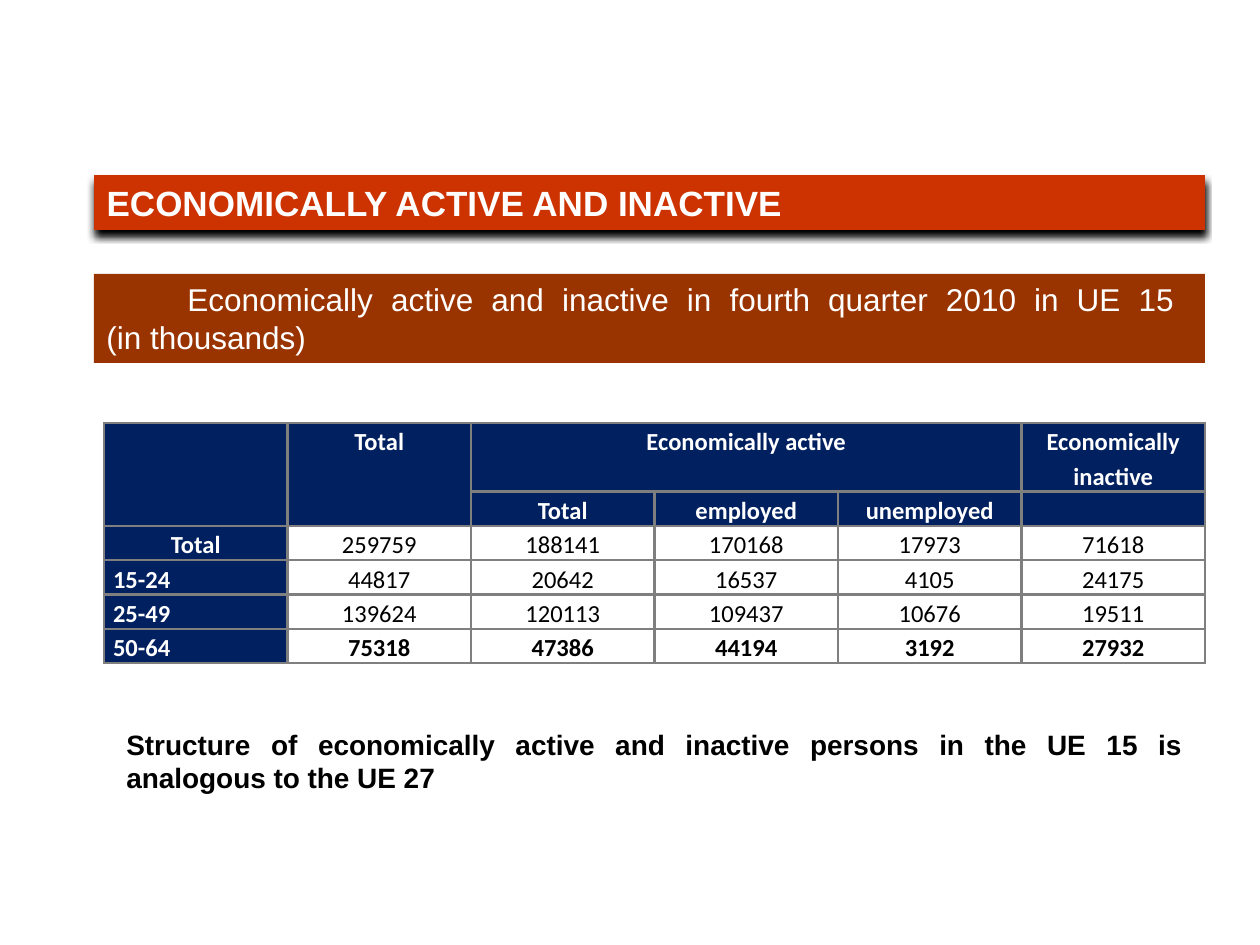
from lxml import etree
from pptx import Presentation
from pptx import util as u
from pptx.dml.color import RGBColor
from pptx.enum import shapes, text
from pptx.oxml.ns import qn

EMU_PER_PX = 914400 / 126
COLORS = {
    "banner": "CC3300",
    "caption": "993300",
    "header": "002060",
    "grid": "7F7F7F",
    "light": "FFFFFF",
    "dark": "000000",
}
ROWS = [
    ["", "Total", "Economically active", "", "", "Economically inactive"],
    ["", "", "Total", "employed", "unemployed", ""],
    ["Total", "259759", "188141", "170168", "17973", "71618"],
    ["15-24", "44817", "20642", "16537", "4105", "24175"],
    ["25-49", "139624", "120113", "109437", "10676", "19511"],
    ["50-64", "75318", "47386", "44194", "3192", "27932"],
]
HEADER_ROWS = 2
MERGES = [((0, 0), (1, 0)), ((0, 1), (1, 1)), ((0, 2), (0, 4))]


def px(length):
    return u.Emu(round(length * EMU_PER_PX))


def rgb(name):
    return RGBColor.from_string(COLORS[name])


def add_run(paragraph, words, size, color, bold=False, font="Arial"):
    run = paragraph.add_run()
    run.text = words
    run.font.name = font
    run.font.size = u.Pt(size)
    run.font.bold = bold
    run.font.color.rgb = rgb(color)


def justified_paragraph(shape):
    frame = shape.text_frame
    frame.word_wrap = True
    frame.auto_size = text.MSO_AUTO_SIZE.NONE
    frame.vertical_anchor = text.MSO_ANCHOR.TOP
    paragraph = frame.paragraphs[0]
    paragraph.alignment = text.PP_ALIGN.JUSTIFY
    return paragraph


def paint(shape, color):
    shape.fill.solid()
    shape.fill.fore_color.rgb = rgb(color)
    shape.line.fill.background()
    shape.shadow.inherit = False


def add_drop_shadow(shape):
    effects = shape._element.spPr.find(qn("a:effectLst"))
    shadow = etree.SubElement(effects, qn("a:outerShdw"), blurRad="50800",
                              dist="50800", dir="5400000", algn="t", rotWithShape="0")
    etree.SubElement(shadow, qn("a:srgbClr"), val=COLORS["dark"])


def add_title(slide):
    title = slide.shapes.title
    title.left, title.top, title.width, title.height = px(94), px(175), px(1111), px(55)
    paint(title, "banner")
    add_drop_shadow(title)
    add_run(justified_paragraph(title), "ECONOMICALLY ACTIVE AND INACTIVE", 20, "light", True)


def add_caption(slide):
    caption = slide.shapes.add_shape(shapes.MSO_SHAPE.RECTANGLE,
                                     px(94), px(274), px(1111), px(89))
    paint(caption, "caption")
    paragraph = justified_paragraph(caption)
    add_run(paragraph, "\t Economically active and inactive in fourth quarter 2010 in UE 15 ",
            18, "light")
    paragraph.add_line_break()
    add_run(paragraph, "(in thousands)", 18, "light")


def add_borders(cell):
    properties = cell._tc.get_or_add_tcPr()
    for position, side in enumerate(("lnL", "lnR", "lnT", "lnB")):
        border = etree.Element(qn(f"a:{side}"), w=str(u.Pt(1.5)))
        fill = etree.SubElement(border, qn("a:solidFill"))
        etree.SubElement(fill, qn("a:srgbClr"), val=COLORS["grid"])
        properties.insert(position, border)


def fill_cell(cell, words, row, column):
    is_header = row < HEADER_ROWS or column == 0
    is_age_group = row > HEADER_ROWS and column == 0
    is_last_row = row == len(ROWS) - 1
    cell.margin_left = cell.margin_right = px(9)
    cell.margin_top = cell.margin_bottom = 0
    if is_header:
        cell.fill.solid()
        cell.fill.fore_color.rgb = rgb("header")
    else:
        cell.fill.background()
    add_borders(cell)
    paragraph = cell.text_frame.paragraphs[0]
    paragraph.alignment = text.PP_ALIGN.JUSTIFY if is_age_group else text.PP_ALIGN.CENTER
    paragraph.line_spacing = 1.15
    if words:
        add_run(paragraph, words, 14, "light" if is_header else "dark",
                is_header or is_last_row, "Calibri")
    else:
        etree.SubElement(paragraph._p, qn("a:endParaRPr"), sz="1400")


def add_activity_table(slide):
    frame = slide.shapes.add_table(len(ROWS), len(ROWS[0]),
                                   px(104), px(423), px(1101), px(237))
    table = frame.table
    table.first_row = table.horz_banding = False
    for index, row in enumerate(table.rows):
        row.height = px(34 if index else 67)
    for start, end in MERGES:
        table.cell(*start).merge(table.cell(*end))
    for row, values in enumerate(ROWS):
        for column, words in enumerate(values):
            fill_cell(table.cell(row, column), words, row, column)


def add_conclusion(slide):
    conclusion = slide.shapes.add_textbox(px(114), px(721), px(1081), px(81))
    add_run(justified_paragraph(conclusion),
            "Structure of economically active and inactive persons in the UE 15 "
            "is analogous to the UE 27", 16, "dark", True)


def main():
    deck = Presentation()
    deck.slide_width, deck.slide_height = px(1260), px(945)
    slide = deck.slides.add_slide(deck.slide_layouts[5])
    add_title(slide)
    add_caption(slide)
    add_activity_table(slide)
    add_conclusion(slide)
    deck.save("out.pptx")


if __name__ == "__main__":
    main()
